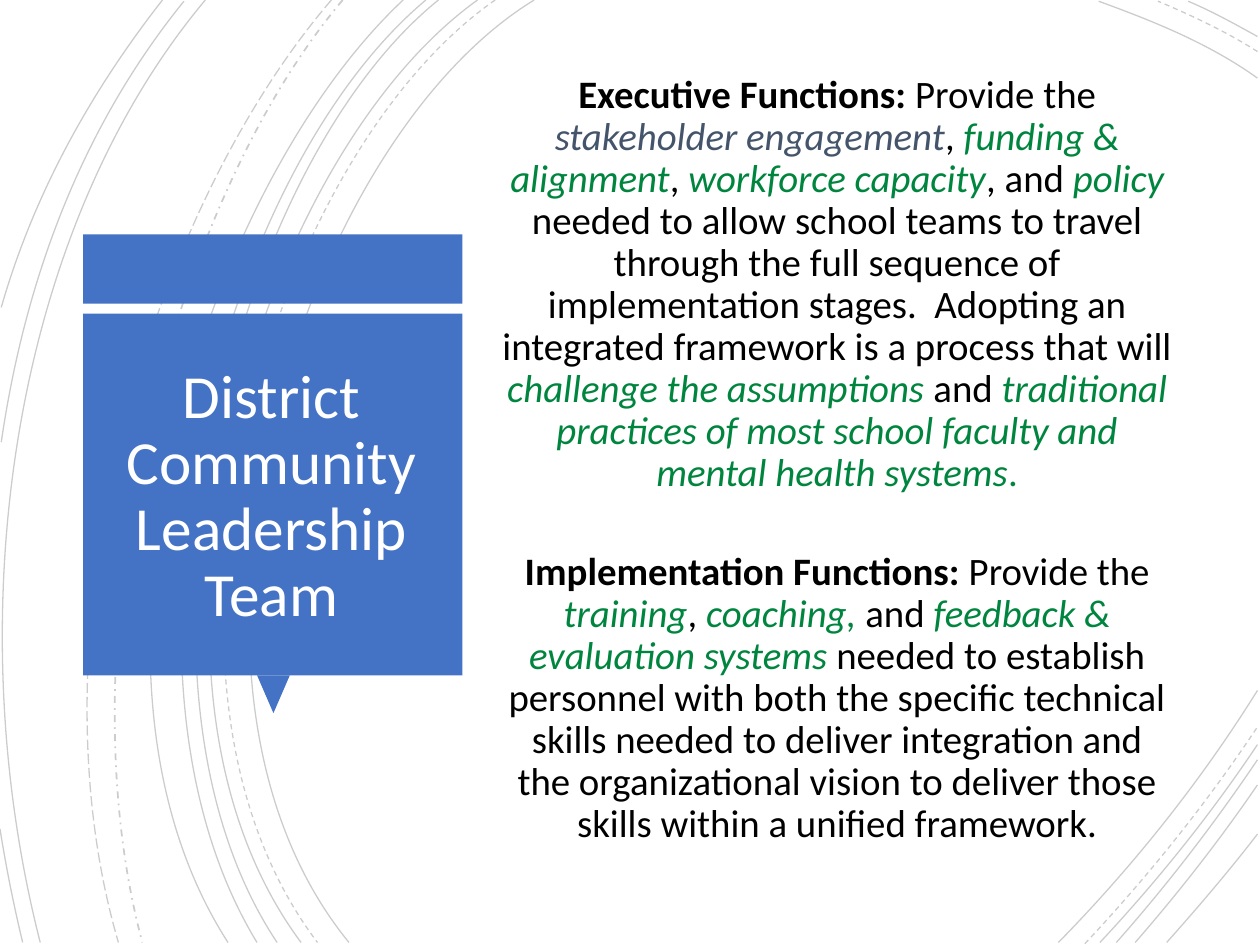
import pptx
import pptx.dml.color
import pptx.enum.dml
import pptx.enum.shapes
import pptx.enum.text
import pptx.oxml.ns
import pptx.util
from lxml import etree

RGB = pptx.dml.color.RGBColor
DASH = pptx.enum.dml.MSO_LINE
FORM = pptx.enum.shapes.MSO_SHAPE
ALIGN = pptx.enum.text.PP_ALIGN
ANCHOR = pptx.enum.text.MSO_ANCHOR
qn = pptx.oxml.ns.qn

PX = 9144  # 100 px to the inch
BLACK = RGB(0x00, 0x00, 0x00)
WHITE = RGB(0xFF, 0xFF, 0xFF)
BLUE = RGB(0x44, 0x72, 0xC4)
SLATE = RGB(0x44, 0x54, 0x6A)
GREEN = RGB(0x00, 0x85, 0x3F)

FORMATS = {
    "title": {"size": 35, "color": WHITE},
    "plain": {"size": 22.2, "color": BLACK},
    "head": {"size": 22.2, "color": BLACK, "bold": True},
    "slate": {"size": 22.2, "color": SLATE, "italic": True},
    "green": {"size": 22.2, "color": GREEN, "italic": True},
    "stop": {"size": 22.2, "color": GREEN},
}

# Start, two control points and end of each arc
SOLID_ARCS = [
    [(424, 0), (236, 115), (107, 540), (277, 748)],
    [(998, 62), (959, 34), (913, 16), (872, 1)],
    [(840, 748), (897, 690), (952, 622), (998, 548)],
    [(379, 0), (202, 127), (82, 537), (239, 748)],
    [(998, 29), (980, 19), (962, 9), (943, 1)],
    [(873, 748), (917, 701), (960, 648), (998, 591)],
    [(348, 0), (183, 133), (82, 541), (220, 748)],
    [(886, 748), (925, 704), (963, 655), (998, 603)],
    [(338, 0), (173, 138), (73, 533), (204, 748)],
    [(901, 748), (935, 709), (968, 667), (998, 623)],
    [(320, 0), (163, 147), (40, 529), (181, 748)],
    [(926, 748), (950, 721), (975, 692), (998, 662)],
    [(163, 0), (8, 185), (-34, 490), (32, 748)],
    [(146, 1), (69, 96), (21, 214), (1, 351)],
    [(0, 658), (5, 689), (11, 719), (18, 748)],
    [(129, 0), (75, 69), (28, 150), (1, 244)],
]
DASH_ARCS = [
    [(393, 0), (213, 125), (92, 537), (252, 748)],
    [(998, 41), (973, 25), (945, 12), (919, 1)],
    [(861, 749), (909, 698), (956, 640), (998, 577)],
]
DOT_ARCS = [[(272, 0), (132, 166), (49, 509), (113, 748)]]
LONG_ARCS = [[(263, 0), (118, 169), (21, 499), (94, 748)]]
ARCS = [
    (SOLID_ARCS, DASH.SOLID, 0.75),
    (DASH_ARCS, DASH.DASH, 0.75),
    (DOT_ARCS, DASH.DASH_DOT, 1),
    (LONG_ARCS, DASH.LONG_DASH, 0.75),
]

EXECUTIVE = [
    ("Executive Functions: ", "head"),
    ("Provide the ", "plain"),
    ("stakeholder engagement", "slate"),
    (", ", "plain"),
    ("funding & alignment", "green"),
    (", ", "plain"),
    ("workforce capacity", "green"),
    (", and ", "plain"),
    ("policy ", "green"),
    ("needed to allow school teams to travel through the full sequence of "
     "implementation stages.  Adopting an integrated framework is a process "
     "that will ", "plain"),
    ("challenge the assumptions ", "green"),
    ("and ", "plain"),
    ("traditional practices of most school faculty and mental health systems",
     "green"),
    (".", "stop"),
]
IMPLEMENT = [
    ("Implementation Functions: ", "head"),
    ("Provide the ", "plain"),
    ("training", "green"),
    (", ", "plain"),
    ("coaching, ", "green"),
    ("and ", "plain"),
    ("feedback & evaluation systems ", "green"),
    ("needed to establish personnel with both the specific technical skills "
     "needed to deliver integration and the organizational vision to deliver "
     "those skills within a unified framework.", "plain"),
]


class Deck:
    def __init__(self, font):
        self.font = font
        self.show = pptx.Presentation()
        self.show.slide_width = 1000 * PX
        self.show.slide_height = 750 * PX
        self.slide = self.show.slides.add_slide(self.show.slide_layouts[6])

    def arc(self, points, dash, width):
        """Draw one faint cubic curve through four control points."""
        start, *rest = points
        pen = self.slide.shapes.build_freeform(*start, scale=PX)
        pen.add_line_segments(rest, close=False)
        shape = pen.convert_to_shape()
        route = shape._element.xpath(".//a:path")[0]
        curve = etree.SubElement(route, qn("a:cubicBezTo"))
        for step in route.findall(qn("a:lnTo")):
            curve.append(step[0])
            route.remove(step)
        shape.shadow.inherit = False
        shape.fill.background()
        shape.line.color.rgb = BLACK
        shape.line.width = pptx.util.Pt(width)
        shape.line.dash_style = dash
        tint = shape._element.xpath(".//a:ln//a:srgbClr")[0]
        etree.SubElement(tint, qn("a:alpha"), val="20000")

    def block(self, form, box, turn=0):
        shape = self.slide.shapes.add_shape(form, *(n * PX for n in box))
        shape.shadow.inherit = False
        shape.fill.solid()
        shape.fill.fore_color.rgb = BLUE
        shape.line.fill.background()
        shape.rotation = turn

    def text(self, box, paras, gap=0, foot=5):
        """Add centred paragraphs, gap points apart, over a foot inset in px."""
        shape = self.slide.shapes.add_textbox(*(n * PX for n in box))
        frame = shape.text_frame
        frame.word_wrap = True
        frame.vertical_anchor = ANCHOR.MIDDLE
        frame.margin_bottom = foot * PX
        for i, runs in enumerate(paras):
            para = frame.add_paragraph() if i else frame.paragraphs[0]
            para.alignment = ALIGN.CENTER
            para.line_spacing = 0.9
            para.space_before = pptx.util.Pt(gap if i else 0)
            for words, style in runs:
                self.run(para, words, FORMATS[style])

    def run(self, para, words, style):
        run = para.add_run()
        run.text = words
        run.font.name = self.font
        for key, value in style.items():
            if key == "color":
                run.font.color.rgb = value
            elif key == "size":
                run.font.size = pptx.util.Pt(value)
            else:
                setattr(run.font, key, value)


def main():
    deck = Deck("Calibri")
    for arcs, dash, width in ARCS:
        for points in arcs:
            deck.arc(points, dash, width)
    deck.block(FORM.RECTANGLE, (66, 186, 301, 55))
    deck.block(FORM.ISOSCELES_TRIANGLE, (204, 536, 26, 30), turn=180)
    deck.block(FORM.RECTANGLE, (66, 249, 301, 287))
    deck.text((74, 264, 283, 262),
              [[("District Community Leadership Team", "title")]])
    deck.text((388, 42, 553, 680), [EXECUTIVE, IMPLEMENT], gap=33, foot=38)
    deck.show.save("out.pptx")


if __name__ == "__main__":
    main()
